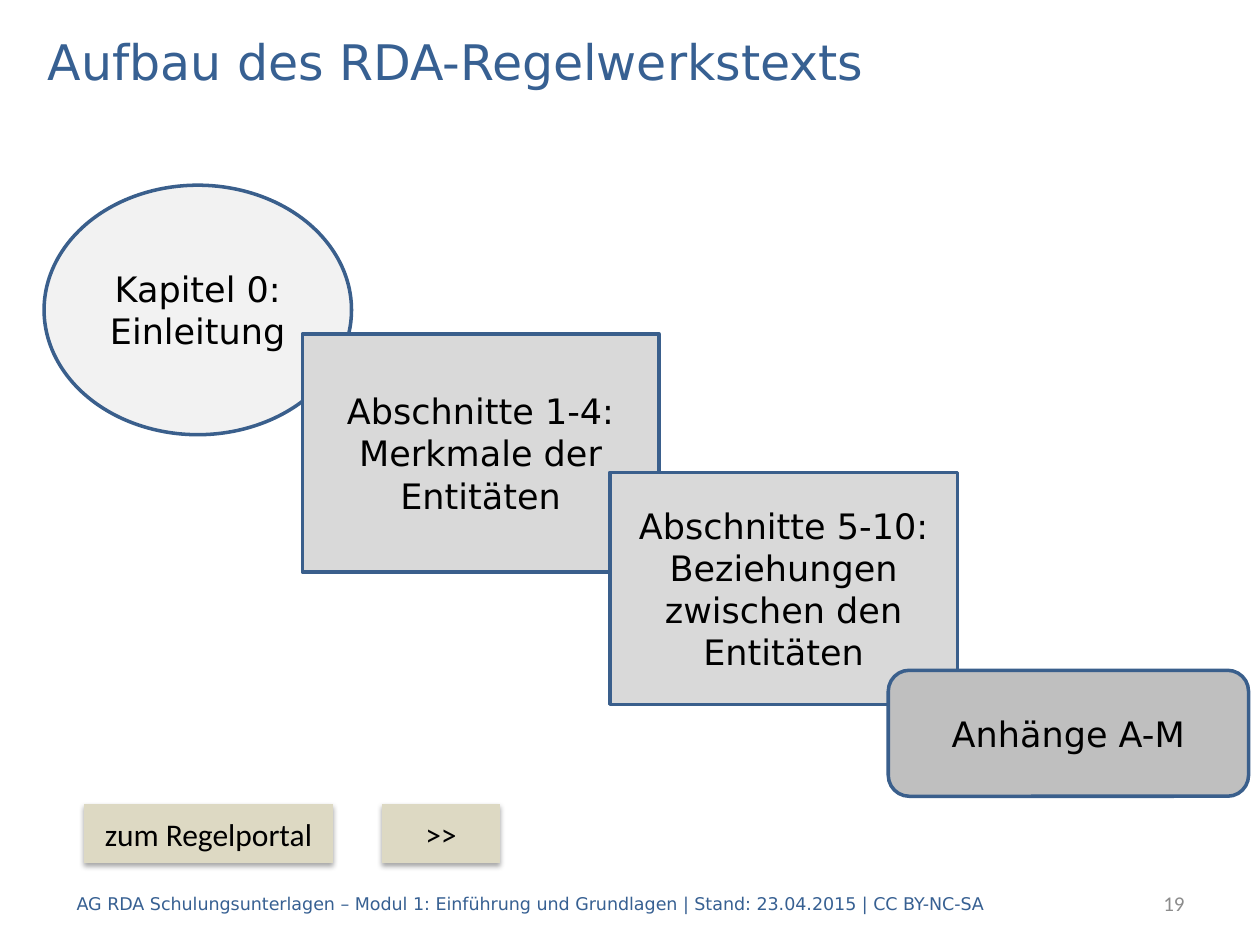
"""Build the slide on the structure of the RDA text."""
from dataclasses import dataclass

from lxml import etree
from pptx import Presentation
from pptx.dml.color import RGBColor
from pptx.enum.shapes import MSO_SHAPE
from pptx.enum.text import MSO_ANCHOR, PP_ALIGN
from pptx.oxml.ns import qn
from pptx.util import Inches, Pt

OVAL, RECT = MSO_SHAPE.OVAL, MSO_SHAPE.RECTANGLE
ROUND, BUTTON = MSO_SHAPE.ROUNDED_RECTANGLE, MSO_SHAPE.ACTION_BUTTON_CUSTOM
LEFT, CENTER, RIGHT = PP_ALIGN.LEFT, PP_ALIGN.CENTER, PP_ALIGN.RIGHT
MIDDLE = MSO_ANCHOR.MIDDLE
SANS, PLAIN = "DejaVu Sans", "Calibri"
BLUE, EDGE, BLACK, GRAY, SAND = "376092", "3A5F8C", "000000", "8C8C8C", "DDD9C3"


@dataclass
class Box:
    kind: MSO_SHAPE
    left: float
    top: float
    width: float
    height: float
    fill: str
    text: str


@dataclass
class Note:
    left: float
    width: float
    text: str
    size: int
    font: str
    tint: str
    align: PP_ALIGN


PARTS = [
    Box(OVAL, 0.35, 1.47, 2.44, 1.98, "F2F2F2", "Kapitel 0: Einleitung"),
    Box(RECT, 2.4, 2.65, 2.83, 1.89, "D9D9D9", "Abschnitte 1-4: Merkmale der Entitäten"),
    Box(RECT, 4.84, 3.75, 2.76, 1.84, "D9D9D9",
        "Abschnitte 5-10: Beziehungen zwischen den Entitäten"),
    Box(ROUND, 7.05, 5.32, 2.86, 1, "BFBFBF", "Anhänge A-M"),
]
BUTTONS = [
    Box(BUTTON, 0.67, 6.38, 1.97, 0.47, SAND, "zum Regelportal"),
    Box(BUTTON, 3.03, 6.38, 0.94, 0.47, SAND, ">>"),
]
NOTES = [
    Note(7.91, 1.59, "19", 12, PLAIN, GRAY, RIGHT),
    Note(0.51, 8.03, "AG RDA Schulungsunterlagen – Modul 1: Einführung und Grundlagen"
         " | Stand: 23.04.2015 | CC BY-NC-SA", 10, SANS, BLUE, LEFT),
]


def color(code: str) -> RGBColor:
    """Turn a hex string into a colour."""
    return RGBColor.from_string(code)


def write(shape, text: str, size: int, font: str, tint: str, align: PP_ALIGN) -> None:
    """Fill a shape with one formatted paragraph."""
    frame = shape.text_frame
    frame.text = text
    frame.word_wrap = True
    frame.vertical_anchor = MIDDLE
    line = frame.paragraphs[0]
    line.alignment = align
    face = line.runs[0].font
    face.size, face.name = Pt(size), font
    face.color.rgb = color(tint)


def draw(slide, box: Box):
    """Add a filled shape without line or shadow."""
    shape = slide.shapes.add_shape(box.kind, Inches(box.left), Inches(box.top),
                                   Inches(box.width), Inches(box.height))
    shape.shadow.inherit = False
    shape.fill.solid()
    shape.fill.fore_color.rgb = color(box.fill)
    shape.line.fill.background()
    return shape


def add_part(slide, box: Box) -> None:
    """Add an outlined part of the text."""
    shape = draw(slide, box)
    shape.line.color.rgb = color(EDGE)
    shape.line.width = Pt(2)
    write(shape, box.text, 20, SANS, BLACK, CENTER)


def add_button(slide, box: Box) -> None:
    """Add a button with a soft shadow."""
    shape = draw(slide, box)
    effects = shape._element.spPr.find(qn("a:effectLst"))
    shade = etree.SubElement(effects, qn("a:outerShdw"), blurRad=str(Pt(3.1)),
                             dist=str(Pt(1.8)), dir="5400000", rotWithShape="0")
    tone = etree.SubElement(shade, qn("a:srgbClr"), val=BLACK)
    etree.SubElement(tone, qn("a:alpha"), val="35000")
    write(shape, box.text, 18, PLAIN, BLACK, CENTER)


def add_note(slide, note: Note) -> None:
    """Add a text in the footer row."""
    shape = slide.shapes.add_textbox(Inches(note.left), Inches(6.97),
                                     Inches(note.width), Inches(0.4))
    write(shape, note.text, note.size, note.font, note.tint, note.align)


def main() -> None:
    """Build and save the slide."""
    deck = Presentation()
    deck.slide_width, deck.slide_height = Inches(10), Inches(7.5)
    slide = deck.slides.add_slide(deck.slide_layouts[5])
    title = slide.shapes.title
    title.left, title.top = Inches(0.28), Inches(0.2)
    title.width, title.height = Inches(9.45), Inches(0.56)
    write(title, "Aufbau des RDA-Regelwerkstexts", 28, SANS, BLUE, LEFT)
    for note in NOTES:
        add_note(slide, note)
    for box in PARTS:
        add_part(slide, box)
    for box in BUTTONS:
        add_button(slide, box)
    deck.save("out.pptx")


if __name__ == "__main__":
    main()
